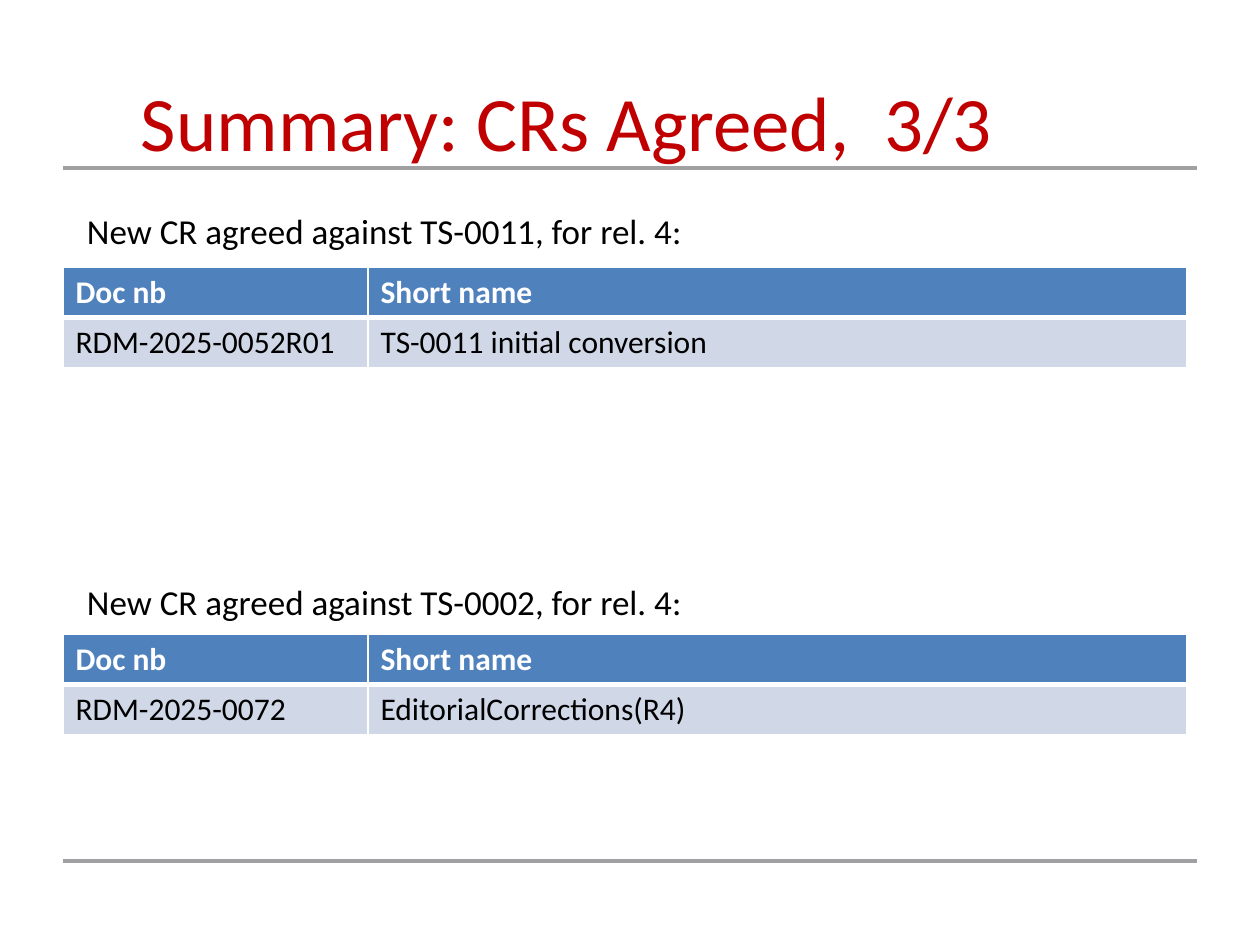
import pptx
import pptx.dml.color
import pptx.enum.shapes
import pptx.enum.text
import pptx.oxml
import pptx.oxml.ns
import pptx.util
from lxml import etree

EMU_PER_PX = 914400 // 126
FONT = "Calibri"
COLORS = {
    "title": "C00000",
    "text": "000000",
    "rule": "A0A0A3",
    "header": "4F81BD",
    "row": "D0D8E8",
    "white": "FFFFFF",
}
LEFT = 63
COLUMN_WIDTHS = (305, 819)
ROW_HEIGHT = 50
HEADINGS = ("Doc nb", "Short name")

# Caption top, table top, caption, document row
SECTIONS = (
    (199, 267, "New CR agreed against TS-0011, for rel. 4:",
     ("RDM-2025-0052R01", "TS-0011 initial conversion")),
    (570, 634, "New CR agreed against TS-0002, for rel. 4:",
     ("RDM-2025-0072", "EditorialCorrections(R4)")),
)


def px(length):
    return pptx.util.Emu(length * EMU_PER_PX)


def rgb(name):
    return pptx.dml.color.RGBColor.from_string(COLORS[name])


def style_text(paragraph, size, color, bold=False):
    for run in paragraph.runs:
        run.font.name = FONT
        run.font.size = pptx.util.Pt(size)
        run.font.bold = bold
        run.font.color.rgb = rgb(color)


def add_rule(slide, y):
    rule = slide.shapes.add_connector(
        pptx.enum.shapes.MSO_CONNECTOR.STRAIGHT, px(LEFT), px(y), px(1197), px(y))
    rule.line.color.rgb = rgb("rule")
    rule.line.width = pptx.util.Pt(1.75)
    etree.SubElement(rule._element.spPr, pptx.oxml.ns.qn("a:effectLst"))


def add_text(slide, box, text, size, color, inset=13):
    frame = slide.shapes.add_textbox(*map(px, box)).text_frame
    frame.word_wrap = True
    frame.vertical_anchor = pptx.enum.text.MSO_ANCHOR.MIDDLE
    frame.margin_left = px(inset)
    frame.text = text
    paragraph = frame.paragraphs[0]
    style_text(paragraph, size, color)
    return paragraph


def set_borders(cell, bottom_width):
    properties = cell._tc.get_or_add_tcPr()
    for side, width in (("L", 1), ("R", 1), ("T", 1), ("B", bottom_width)):
        border = etree.SubElement(properties, pptx.oxml.ns.qn(f"a:ln{side}"),
                                  w=str(pptx.util.Pt(width)))
        fill = etree.SubElement(border, pptx.oxml.ns.qn("a:solidFill"))
        etree.SubElement(fill, pptx.oxml.ns.qn("a:srgbClr"), val=COLORS["white"])


def add_cr_table(slide, top, document):
    rows = (HEADINGS, document)
    table = slide.shapes.add_table(
        len(rows), len(HEADINGS), px(LEFT), px(top),
        px(sum(COLUMN_WIDTHS)), px(ROW_HEIGHT * len(rows))).table
    for column, width in zip(table.columns, COLUMN_WIDTHS):
        column.width = px(width)
    for r, values in enumerate(rows):
        is_header = r == 0
        for c, value in enumerate(values):
            cell = table.cell(r, c)
            cell.text = value
            style_text(cell.text_frame.paragraphs[0], 18,
                       "white" if is_header else "text", is_header)
            # Borders come before the fill in the cell properties
            set_borders(cell, 3 if is_header else 1)
            cell.fill.solid()
            cell.fill.fore_color.rgb = rgb("header" if is_header else "row")


def main():
    presentation = pptx.Presentation()
    presentation.slide_width = px(1260)
    presentation.slide_height = px(945)
    slide = presentation.slides.add_slide(presentation.slide_layouts[6])

    # Footer and title rules
    for y in (861, 168):
        add_rule(slide, y)

    # Title
    title = add_text(slide, (0, 63, 1134, 116), "Summary: CRs Agreed,  3/3", 44, "title")
    title.alignment = pptx.enum.text.PP_ALIGN.CENTER

    # Agreed change requests
    for caption_top, table_top, caption, document in SECTIONS:
        add_text(slide, (LEFT, caption_top, 1102, 63), caption, 20, "text", inset=24)
        add_cr_table(slide, table_top, document)

    presentation.save("out.pptx")


if __name__ == "__main__":
    main()
